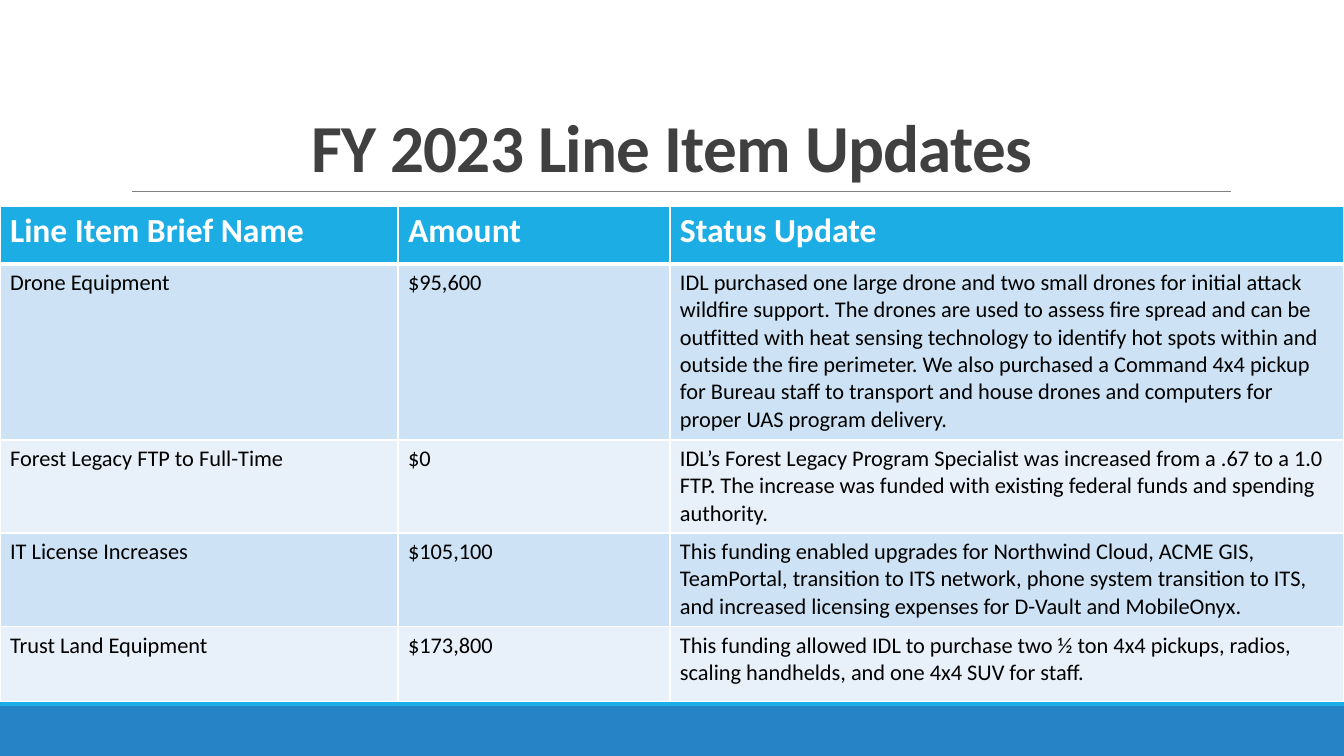
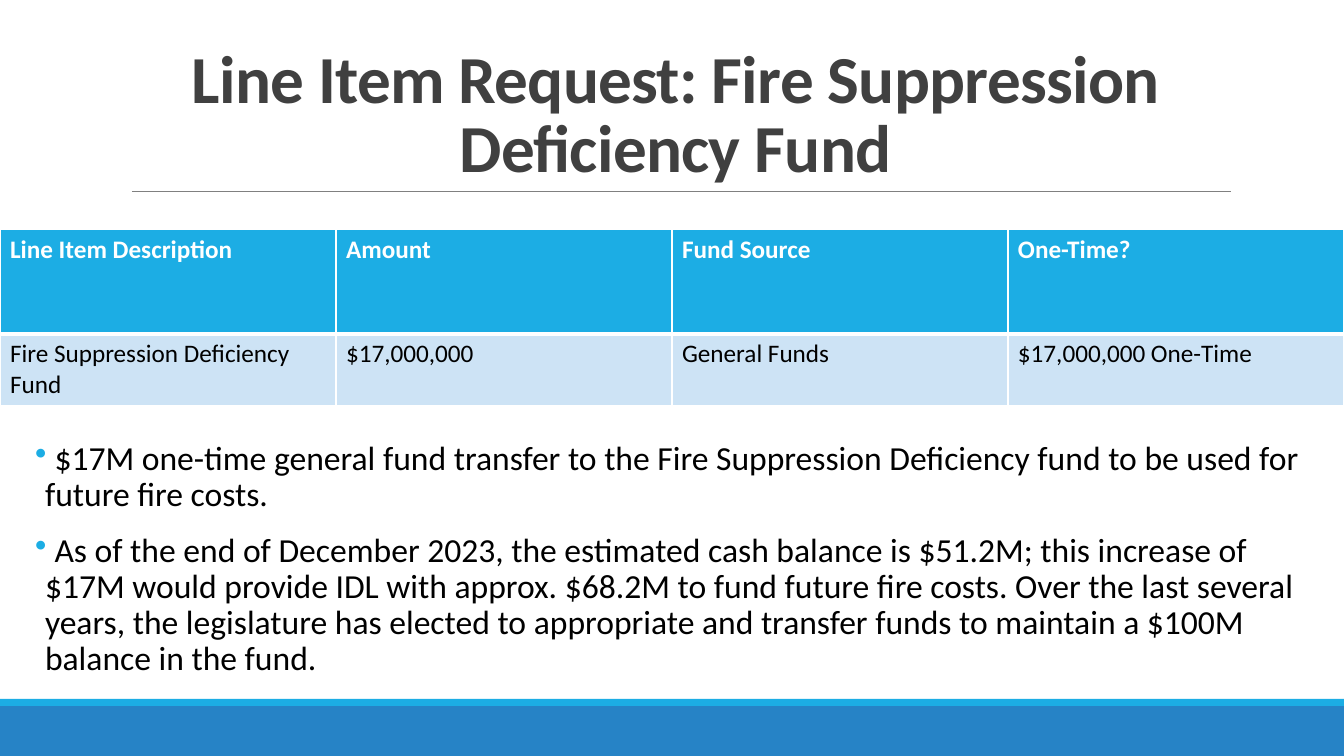
"""Build two budget slides: line item updates and a line item request."""
from lxml import etree
from pptx import Presentation
from pptx.dml.color import RGBColor
from pptx.enum import shapes, text
from pptx.oxml import ns
from pptx import util as u

PX = 914400 / 100.8
WIDTH, HEIGHT = 1344, 756
FONT = "Calibri"
COLORS = {
    "white": "FFFFFF",
    "black": "000000",
    "title": "404040",
    "rule": "808080",
    "accent": "1CADE4",
    "footer": "2683C6",
    "odd": "CDE3F5",
    "even": "E8F1FA",
}
BANDS = [("footer", 706, 50), ("accent", 699, 7)]
RULE = (132, 191, 1231)
TITLE_TOP, TITLE_HEIGHT = 31, 160

UPDATES = {
    "title": "FY 2023 Line Item Updates",
    "title_x": (0, 1344),
    "table": {
        "top": 206,
        "cols": [398, 272, 674],
        "heights": [58, 176, 93, 94, 75],
        "sizes": (24, 16),
        "rows": [
            ("Line Item Brief Name", "Amount", "Status Update"),
            ("Drone Equipment", "$95,600",
             "IDL purchased one large drone and two small drones for initial attack wildfire "
             "support. The drones are used to assess fire spread and can be outfitted with heat "
             "sensing technology to identify hot spots within and outside the fire perimeter. "
             "We also purchased a Command 4x4 pickup for Bureau staff to transport and house "
             "drones and computers for proper UAS program delivery."),
            ("Forest Legacy FTP to Full-Time", "$0",
             "IDL’s Forest Legacy Program Specialist was increased from a .67 to a 1.0 FTP. "
             "The increase was funded with existing federal funds and spending authority."),
            ("IT License Increases", "$105,100",
             "This funding enabled upgrades for Northwind Cloud, ACME GIS, TeamPortal, "
             "transition to ITS network, phone system transition to ITS, and increased "
             "licensing expenses for D-Vault and MobileOnyx."),
            ("Trust Land Equipment", "$173,800",
             "This funding allowed IDL to purchase two ½ ton 4x4 pickups, radios, scaling "
             "handhelds, and one 4x4 SUV for staff."),
        ],
    },
}
REQUEST = {
    "title": "Line Item Request: Fire Suppression Deficiency Fund",
    "title_x": (121, 1109),
    "table": {
        "top": 229,
        "cols": [336] * 4,
        "heights": [105, 72],
        "sizes": (18, 18),
        "rows": [
            ("Line Item Description", "Amount", "Fund Source", "One-Time?"),
            ("Fire Suppression Deficiency Fund", "$17,000,000", "General Funds",
             "$17,000,000 One-Time"),
        ],
    },
    "bullets": [
        " $17M one-time general fund transfer to the Fire Suppression Deficiency fund to be "
        "used for future fire costs.",
        " As of the end of December 2023, the estimated cash balance is $51.2M; this increase "
        "of \v$17M would provide IDL with approx. $68.2M to fund future fire costs. Over the "
        "last several years, the legislature has elected to appropriate and transfer funds to "
        "maintain a $100M balance in the fund.",
    ],
}
BULLETS_BOX = (35, 436, 1309, 242)


def px(n):
    return u.Emu(round(n * PX))


def rgb(name):
    return RGBColor.from_string(COLORS[name])


def add_solid(parent, tag, color):
    el = etree.SubElement(parent, ns.qn(tag))
    etree.SubElement(el, ns.qn("a:srgbClr")).set("val", COLORS[color])


def write(tf, paragraphs, size, color="black", bold=False, align=None, leading=None,
          before=None, after=None, tracking=None, bullet=None, hang=10):
    for i, words in enumerate(paragraphs):
        p = tf.add_paragraph() if i else tf.paragraphs[0]
        p.text = words
        p.alignment, p.line_spacing = align, leading
        p.space_before, p.space_after = before, after
        for r in p.runs:
            r.font.name, r.font.size, r.font.bold = FONT, u.Pt(size), bold
            r.font.color.rgb = rgb(color)
            if tracking:
                r.font._element.set("spc", str(tracking))
        if bullet:
            pPr = p._p.get_or_add_pPr()
            pPr.set("marL", str(px(hang)))
            pPr.set("indent", str(-px(hang)))
            add_solid(pPr, "a:buClr", "accent")
            etree.SubElement(pPr, ns.qn("a:buChar")).set("char", bullet)


def add_text(s, box, paragraphs, anchor=text.MSO_ANCHOR.TOP, side=10, **fmt):
    tf = s.shapes.add_textbox(*map(px, box)).text_frame
    tf.word_wrap = True
    tf.vertical_anchor = anchor
    tf.margin_left = tf.margin_right = px(side)
    tf.margin_top = tf.margin_bottom = px(5)
    write(tf, paragraphs, **fmt)


def add_frame(s, title, title_x):
    for color, top, height in BANDS:
        sp = s.shapes.add_shape(shapes.MSO_SHAPE.RECTANGLE, 0, px(top), px(WIDTH), px(height))
        sp.shadow.inherit = False
        sp.fill.solid()
        sp.fill.fore_color.rgb = rgb(color)
        sp.line.fill.background()
    left, y, right = RULE
    rule = s.shapes.add_connector(shapes.MSO_CONNECTOR.STRAIGHT, px(left), px(y), px(right), px(y))
    rule.line.color.rgb = rgb("rule")
    rule.line.width = u.Pt(0.5)
    etree.SubElement(rule._element.spPr, ns.qn("a:effectLst"))
    x, width = title_x
    add_text(s, (x, TITLE_TOP, width, TITLE_HEIGHT), [title], anchor=text.MSO_ANCHOR.BOTTOM,
             size=48, color="title", bold=True, align=text.PP_ALIGN.CENTER, leading=0.85,
             tracking=-50)


def add_borders(cell, top, bottom):
    tcPr = cell._tc.get_or_add_tcPr()
    for i, (side, width) in enumerate(zip("LRTB", (1, 1, top, bottom))):
        ln = etree.Element(ns.qn(f"a:ln{side}"), w=str(u.Pt(width)))
        add_solid(ln, "a:solidFill", "white")
        tcPr.insert(i, ln)


def add_grid(s, top, cols, heights, sizes, rows):
    table = s.shapes.add_table(len(rows), len(cols), 0, px(top), px(sum(cols)),
                               px(sum(heights))).table
    for col, width in zip(table.columns, cols):
        col.width = px(width)
    for i, (row, height, values) in enumerate(zip(table.rows, heights, rows)):
        row.height = px(height)
        header = i == 0
        fill = "accent" if header else ("even", "odd")[i % 2]
        for cell, value in zip(row.cells, values):
            cell.fill.solid()
            cell.fill.fore_color.rgb = rgb(fill)
            add_borders(cell, top=3 if i == 1 else 1, bottom=3 if header else 1)
            write(cell.text_frame, [value], size=sizes[0 if header else 1],
                  color="white" if header else "black", bold=header)


def main():
    prs = Presentation()
    prs.slide_width, prs.slide_height = px(WIDTH), px(HEIGHT)
    for content in (UPDATES, REQUEST):
        s = prs.slides.add_slide(prs.slide_layouts[6])
        add_frame(s, content["title"], content["title_x"])
        if "bullets" in content:
            add_text(s, BULLETS_BOX, content["bullets"], side=0, size=24, leading=0.9,
                     before=u.Pt(12), after=u.Pt(2), bullet="•")
        add_grid(s, **content["table"])
    prs.save("out.pptx")


if __name__ == "__main__":
    main()
